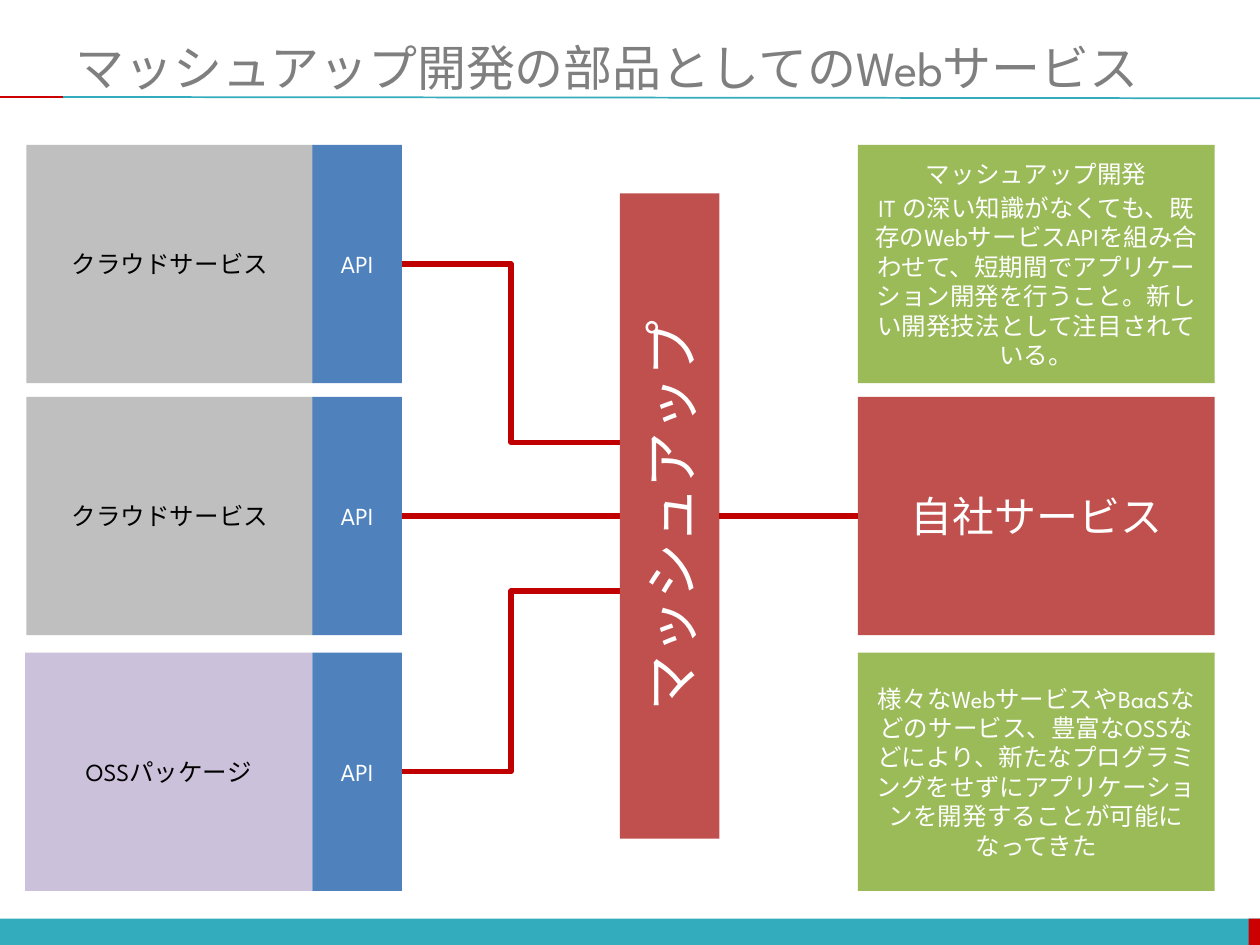
from pptx import Presentation
from pptx.dml.color import RGBColor
from pptx.enum.shapes import MSO_CONNECTOR as Connector, MSO_SHAPE as Shape
from pptx.enum.text import MSO_ANCHOR as Anchor, MSO_AUTO_SIZE as AutoSize, PP_ALIGN as Align
from pptx.oxml.ns import qn
from pptx.util import Inches, Pt
from lxml.etree import SubElement

FONT = "League Spartan"
TEAL = RGBColor(0x33, 0xAC, 0xBD)
BRIGHT_RED = RGBColor(0xCC, 0x00, 0x00)
DARK_RED = RGBColor(0xC0, 0x00, 0x00)
BRICK = RGBColor(0xC0, 0x50, 0x4D)
GREEN = RGBColor(0x9B, 0xBB, 0x59)
BLUE = RGBColor(0x4F, 0x81, 0xBD)
LILAC = RGBColor(0xCC, 0xC1, 0xDA)
SILVER = RGBColor(0xBF, 0xBF, 0xBF)
GRAY = RGBColor(0x7F, 0x7F, 0x7F)
BLACK = RGBColor(0x00, 0x00, 0x00)
WHITE = RGBColor(0xFF, 0xFF, 0xFF)

TITLE = "マッシュアップ開発の部品としてのWebサービス"
MASHUP = "マッシュアップ"
SOURCES = [
    ("クラウドサービス", SILVER, 0.21),
    ("クラウドサービス", SILVER, 0.21),
    ("OSSパッケージ", LILAC, 0.2),
]
RESULTS = [
    (["マッシュアップ開発",
      "IT の深い知識がなくても、既存のWebサービスAPIを組み合わせて、短期間で"
      "アプリケーション開発を行うこと。新しい開発技法として注目されている。"], GREEN, 14),
    (["自社サービス"], BRICK, 24),
    (["様々なWebサービスやBaaSなどのサービス、豊富なOSSなどにより、新たな"
      "プログラミングをせずにアプリケーションを開発することが可能になってきた"], GREEN, 14),
]

ROW_TOPS = [1.15, 3.15, 5.18]
ROW_HEIGHT = 1.89
API_LEFT, API_WIDTH = 2.48, 0.71
RESULT_LEFT, RESULT_WIDTH = 6.81, 2.83
MASHUP_LEFT, MASHUP_WIDTH, MASHUP_LENGTH = 4.92, 0.79, 5.12
MASHUP_ENTRIES = [3.51, 4.1, 4.69]


def format_font(font, size, color):
    for name, value in {"name": FONT, "size": Pt(size)}.items():
        setattr(font, name, value)
    font.color.rgb = color


def add_box(slide, bounds, fill, lines=(), size=14, color=WHITE):
    shape = slide.shapes.add_shape(Shape.RECTANGLE, *map(Inches, bounds))
    shape.shadow.inherit = False
    shape.fill.solid()
    shape.fill.fore_color.rgb = fill
    shape.line.fill.background()
    frame = shape.text_frame
    frame.word_wrap = True
    frame.vertical_anchor = Anchor.MIDDLE
    for index, line in enumerate(lines):
        paragraph = frame.add_paragraph() if index else frame.paragraphs[0]
        paragraph.text = line
        paragraph.alignment = Align.CENTER
        paragraph.space_before = Pt(0.2 * size if index else 0)
        format_font(paragraph.runs[0].font, size, color)
    return shape


def add_line(slide, start, end, color, width, kind=Connector.STRAIGHT):
    connector = slide.shapes.add_connector(kind, *map(Inches, (*start, *end)))
    connector.line.color.rgb = color
    connector.line.width = Pt(width)
    properties = connector._element.find(qn("p:spPr"))
    SubElement(properties, qn("a:effectLst"))


def add_title(slide):
    title = slide.shapes.title
    bounds = {"left": 0.5, "top": 0.3, "width": 9.5, "height": 0.46}
    for name, value in bounds.items():
        setattr(title, name, Inches(value))
    frame = title.text_frame
    frame.text = TITLE
    settings = {"word_wrap": True, "auto_size": AutoSize.NONE,
                "vertical_anchor": Anchor.MIDDLE}
    for name, value in settings.items():
        setattr(frame, name, value)
    frame.paragraphs[0].alignment = Align.LEFT
    format_font(frame.paragraphs[0].runs[0].font, 28, GRAY)


def main():
    presentation = Presentation()
    presentation.slide_width, presentation.slide_height = Inches(10), Inches(7.5)
    slide = presentation.slides.add_slide(presentation.slide_layouts[5])

    add_box(slide, (0, 7.29, 10, 0.21), TEAL)
    add_box(slide, (9.91, 7.29, 0.09, 0.21), BRIGHT_RED)
    add_line(slide, (0.5, 0.77), (10, 0.78), TEAL, 1)
    add_line(slide, (0, 0.77), (0.5, 0.77), BRIGHT_RED, 1)
    add_title(slide)

    middle = ROW_TOPS[1] + ROW_HEIGHT / 2
    for top, entry, source, result in zip(ROW_TOPS, MASHUP_ENTRIES, SOURCES, RESULTS):
        name, fill, left = source
        add_box(slide, (left, top, 2.28, ROW_HEIGHT), fill, [name], color=BLACK)
        add_box(slide, (API_LEFT, top, API_WIDTH, ROW_HEIGHT), BLUE, ["API"])
        lines, fill, size = result
        add_box(slide, (RESULT_LEFT, top, RESULT_WIDTH, ROW_HEIGHT), fill, lines, size)
        center = top + ROW_HEIGHT / 2
        straight = top == ROW_TOPS[1]
        add_line(slide, (API_LEFT + API_WIDTH, center),
                 (MASHUP_LEFT, center if straight else entry), DARK_RED, 3,
                 Connector.STRAIGHT if straight else Connector.ELBOW)

    mashup_center = MASHUP_LEFT + MASHUP_WIDTH / 2
    mashup = add_box(slide, (mashup_center - MASHUP_LENGTH / 2, middle - MASHUP_WIDTH / 2,
                             MASHUP_LENGTH, MASHUP_WIDTH), BRICK, [MASHUP], 32)
    mashup.rotation = 270
    add_line(slide, (MASHUP_LEFT + MASHUP_WIDTH, middle), (RESULT_LEFT, middle), DARK_RED, 3)

    presentation.save("out.pptx")


if __name__ == "__main__":
    main()
